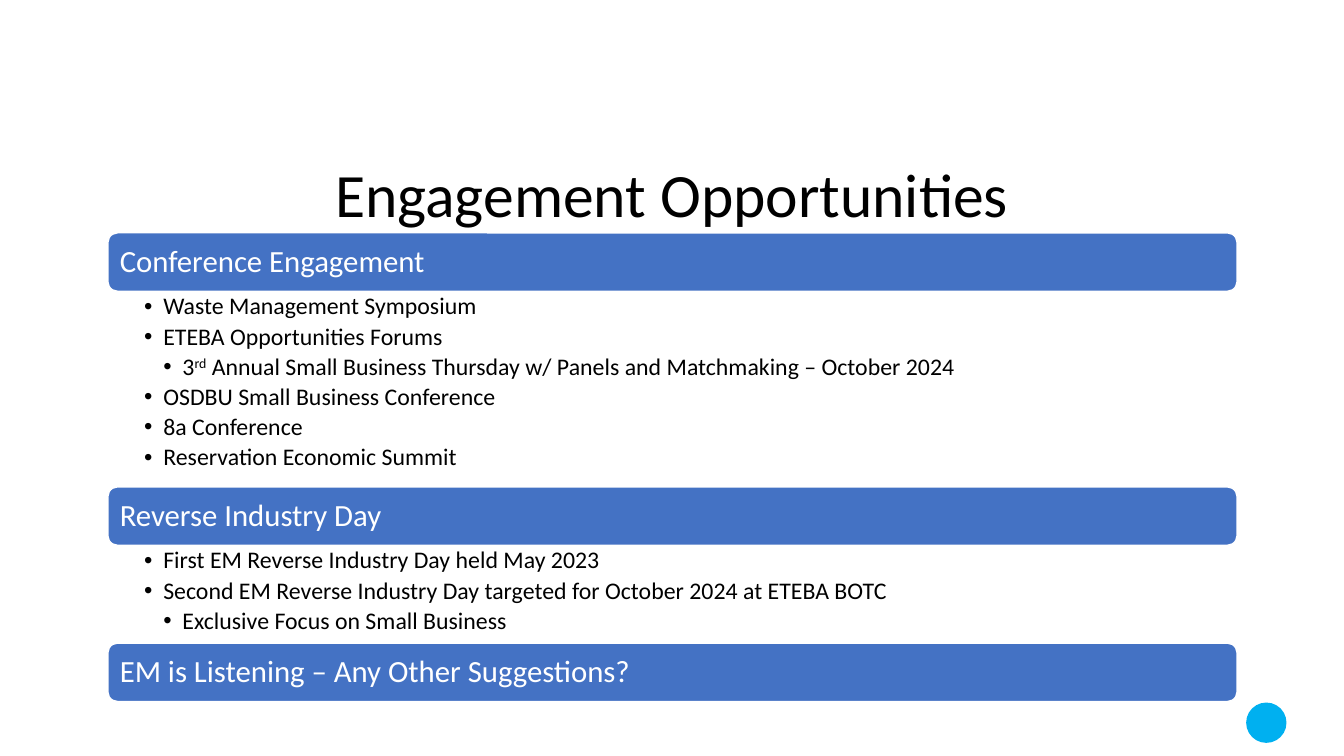
from dataclasses import dataclass

from lxml.etree import SubElement
from pptx import Presentation
from pptx.dml.color import RGBColor
from pptx.enum.shapes import MSO_SHAPE
from pptx.enum.text import MSO_ANCHOR, MSO_AUTO_SIZE, PP_ALIGN
from pptx.oxml.ns import qn
from pptx.util import Inches, Pt


@dataclass(frozen=True)
class Theme:
    font: str = "Calibri"
    text: RGBColor = RGBColor(0, 0, 0)
    white: RGBColor = RGBColor(255, 255, 255)
    bar: RGBColor = RGBColor(0x44, 0x72, 0xC4)
    dot: RGBColor = RGBColor(0x00, 0xB0, 0xF0)
    title_size: int = 44
    heading_size: int = 22
    bullet_size: int = 17


THEME = Theme()

# Layout of the stacked sections, in inches
LEFT, TOP, WIDTH = 1.07, 2.31, 11.2
BAR_HEIGHT = 0.58
INDENT = 0.19

# Heading, height of the list below it, and bullets as (level, runs);
# a run starting with "^" is superscript
SECTIONS = [
    ("Conference Engagement", 1.94, [
        (1, ["Waste Management Symposium"]),
        (1, ["ETEBA Opportunities Forums"]),
        (2, ["3", "^rd", " Annual Small Business Thursday w/ Panels and "
             "Matchmaking – October 2024"]),
        (1, ["OSDBU Small Business Conference"]),
        (1, ["8a Conference"]),
        (1, ["Reservation Economic Summit"]),
    ]),
    ("Reverse Industry Day", 0.97, [
        (1, ["First EM Reverse Industry Day held May 2023"]),
        (1, ["Second EM Reverse Industry Day targeted for October 2024 "
             "at ETEBA BOTC"]),
        (2, ["Exclusive Focus on Small Business"]),
    ]),
    ("EM is Listening – Any Other Suggestions?", 0, []),
]


def add_run(p, text, size, color):
    r = p.add_run()
    r.text = text.removeprefix("^")
    r.font.name = THEME.font
    r.font.size = Pt(size)
    r.font.color.rgb = color
    if text.startswith("^"):
        r.font._element.set("baseline", "30000")


def set_margins(tf, left, top, right, bottom):
    tf.word_wrap = True
    tf.margin_left, tf.margin_top = Inches(left), Inches(top)
    tf.margin_right, tf.margin_bottom = Inches(right), Inches(bottom)


def add_filled_shape(s, kind, left, top, width, height, fill):
    sp = s.shapes.add_shape(kind, Inches(left), Inches(top),
                            Inches(width), Inches(height))
    sp.shadow.inherit = False
    sp.fill.solid()
    sp.fill.fore_color.rgb = fill
    sp.line.fill.background()
    return sp


def add_title(s, text):
    sp = s.shapes.add_textbox(Inches(2.34), Inches(1.5),
                              Inches(8.65), Inches(0.84))
    tf = sp.text_frame
    tf.word_wrap = True
    tf.auto_size = MSO_AUTO_SIZE.SHAPE_TO_FIT_TEXT
    p = tf.paragraphs[0]
    p.alignment = PP_ALIGN.CENTER
    add_run(p, text, THEME.title_size, THEME.text)


def add_heading_bar(s, top, text):
    sp = add_filled_shape(s, MSO_SHAPE.ROUNDED_RECTANGLE,
                          LEFT, top, WIDTH, BAR_HEIGHT, THEME.bar)
    sp.line.color.rgb = THEME.white
    sp.line.width = Pt(1)
    tf = sp.text_frame
    set_margins(tf, 0.09, 0.09, 0.09, 0.09)
    tf.vertical_anchor = MSO_ANCHOR.MIDDLE
    p = tf.paragraphs[0]
    p.alignment = PP_ALIGN.LEFT
    p.line_spacing = 0.9
    add_run(p, text, THEME.heading_size, THEME.white)


def add_bullets(s, top, height, bullets):
    sp = s.shapes.add_textbox(Inches(LEFT), Inches(top),
                              Inches(WIDTH), Inches(height))
    tf = sp.text_frame
    set_margins(tf, 0.36, 0.03, 0.17, 0.03)
    for i, (level, runs) in enumerate(bullets):
        p = tf.add_paragraph() if i else tf.paragraphs[0]
        p.level = level
        p.line_spacing = 0.9
        p.space_after = Pt(3.2)
        pPr = p._p.get_or_add_pPr()
        pPr.set("marL", str(Inches(INDENT * level)))
        pPr.set("indent", str(-Inches(INDENT)))
        SubElement(pPr, qn("a:buFont"), typeface="Arial")
        SubElement(pPr, qn("a:buChar"), char="•")
        for text in runs:
            add_run(p, text, THEME.bullet_size, THEME.text)


def main():
    prs = Presentation()
    prs.slide_width, prs.slide_height = Inches(13.33), Inches(7.5)
    s = prs.slides.add_slide(prs.slide_layouts[6])

    # Corner dot and title
    add_filled_shape(s, MSO_SHAPE.OVAL, 12.36, 6.97, 0.4, 0.4, THEME.dot)
    add_title(s, "Engagement Opportunities")

    # Sections stacked from the top down
    top = TOP
    for heading, list_height, bullets in SECTIONS:
        add_heading_bar(s, top, heading)
        top += BAR_HEIGHT
        if bullets:
            add_bullets(s, top, list_height, bullets)
        top += list_height

    prs.save("out.pptx")


if __name__ == "__main__":
    main()
